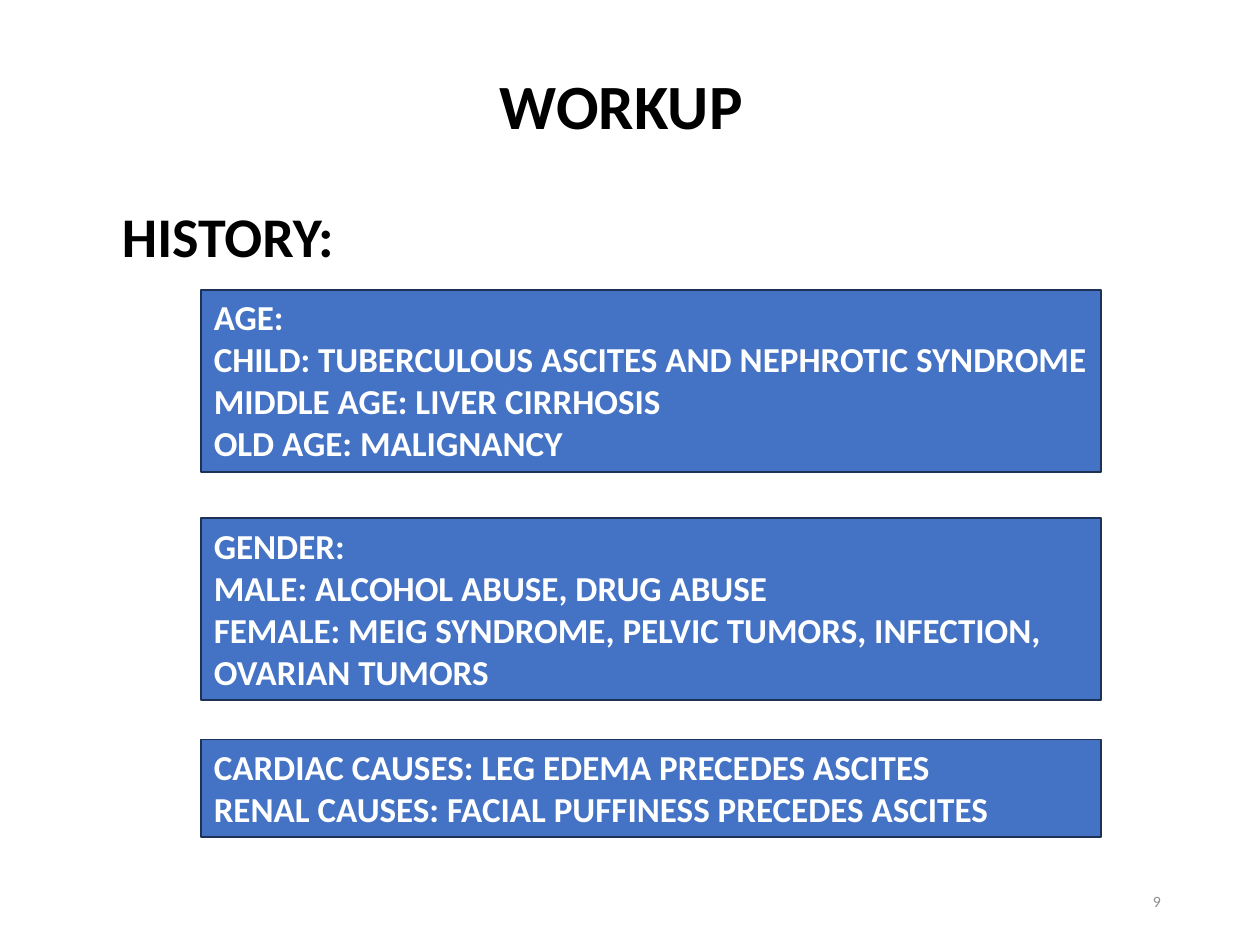
from dataclasses import dataclass

from pptx import Presentation
from pptx.dml.color import RGBColor
from pptx.enum.shapes import MSO_SHAPE
from pptx.enum.text import MSO_ANCHOR, MSO_AUTO_SIZE, PP_ALIGN
from pptx.util import Cm, Pt

RECTANGLE = MSO_SHAPE.RECTANGLE
TOP, MIDDLE = MSO_ANCHOR.TOP, MSO_ANCHOR.MIDDLE
LEFT, RIGHT = PP_ALIGN.LEFT, PP_ALIGN.RIGHT
GROW = MSO_AUTO_SIZE.SHAPE_TO_FIT_TEXT


@dataclass(frozen=True)
class Theme:
    font: str = "Calibri"
    ink: RGBColor = RGBColor(0x00, 0x00, 0x00)
    muted: RGBColor = RGBColor(0x8C, 0x8C, 0x8C)
    card_fill: RGBColor = RGBColor(0x44, 0x72, 0xC4)
    card_line: RGBColor = RGBColor(0x1E, 0x32, 0x56)
    card_text: RGBColor = RGBColor(0xFF, 0xFF, 0xFF)
    title_size: int = 36
    heading_size: int = 32
    card_size: int = 20
    number_size: int = 9


THEME = Theme()
CARD_LEFT, CARD_WIDTH = 4.06, 18.14
CARDS = [
    (5.84, 3.68, [
        "AGE:",
        "CHILD: TUBERCULOUS ASCITES AND NEPHROTIC SYNDROME",
        "MIDDLE AGE: LIVER CIRRHOSIS",
        "OLD AGE: MALIGNANCY",
    ]),
    (10.44, 3.68, [
        "GENDER:",
        "MALE: ALCOHOL ABUSE, DRUG ABUSE",
        "FEMALE: MEIG SYNDROME, PELVIC TUMORS, INFECTION, OVARIAN TUMORS",
    ]),
    (14.91, 1.96, [
        "CARDIAC CAUSES: LEG EDEMA PRECEDES ASCITES",
        "RENAL CAUSES: FACIAL PUFFINESS PRECEDES ASCITES",
    ]),
]


def write_paragraph(frame, text, size, color, bold=True, align=LEFT, indent=0, before=0):
    para = frame.paragraphs[0]
    if para.runs:
        para = frame.add_paragraph()
    para.alignment = align
    if indent:
        para._p.get_or_add_pPr().set("marL", str(Cm(indent)))
    if before:
        para.space_before = Pt(before)
    span = para.add_run()
    span.text = text
    span.font.name = THEME.font
    span.font.size = Pt(size)
    span.font.bold = bold
    span.font.color.rgb = color


def add_text_box(page, left, top, width, height, anchor=TOP):
    box = page.shapes.add_textbox(Cm(left), Cm(top), Cm(width), Cm(height))
    frame = box.text_frame
    frame.word_wrap = True
    frame.vertical_anchor = anchor
    return frame


def add_card(page, top, height, lines):
    card = page.shapes.add_shape(
        RECTANGLE, Cm(CARD_LEFT), Cm(top), Cm(CARD_WIDTH), Cm(height))
    card.shadow.inherit = False
    card.fill.solid()
    card.fill.fore_color.rgb = THEME.card_fill
    card.line.color.rgb = THEME.card_line
    card.line.width = Pt(1)
    frame = card.text_frame
    frame.word_wrap = True
    frame.auto_size = GROW
    frame.vertical_anchor = TOP
    for line in lines:
        write_paragraph(frame, line, THEME.card_size, THEME.card_text)


def add_headings(page):
    frame = add_text_box(page, 2.21, 1.22, 13.49, 5.56)
    write_paragraph(frame, "WORKUP", THEME.title_size, THEME.ink, indent=7.62)
    write_paragraph(frame, "HISTORY:", THEME.heading_size, THEME.ink, before=34)


def add_page_number(page):
    frame = add_text_box(page, 17.93, 17.65, 5.72, 1.02, anchor=MIDDLE)
    write_paragraph(frame, "9", THEME.number_size, THEME.muted, bold=False, align=RIGHT)


def main():
    deck = Presentation()
    deck.slide_width, deck.slide_height = Cm(25.4), Cm(19.05)
    page = deck.slides.add_slide(deck.slide_layouts[6])
    add_page_number(page)
    add_headings(page)
    for top, height, lines in CARDS:
        add_card(page, top, height, lines)
    deck.save("out.pptx")


if __name__ == "__main__":
    main()
